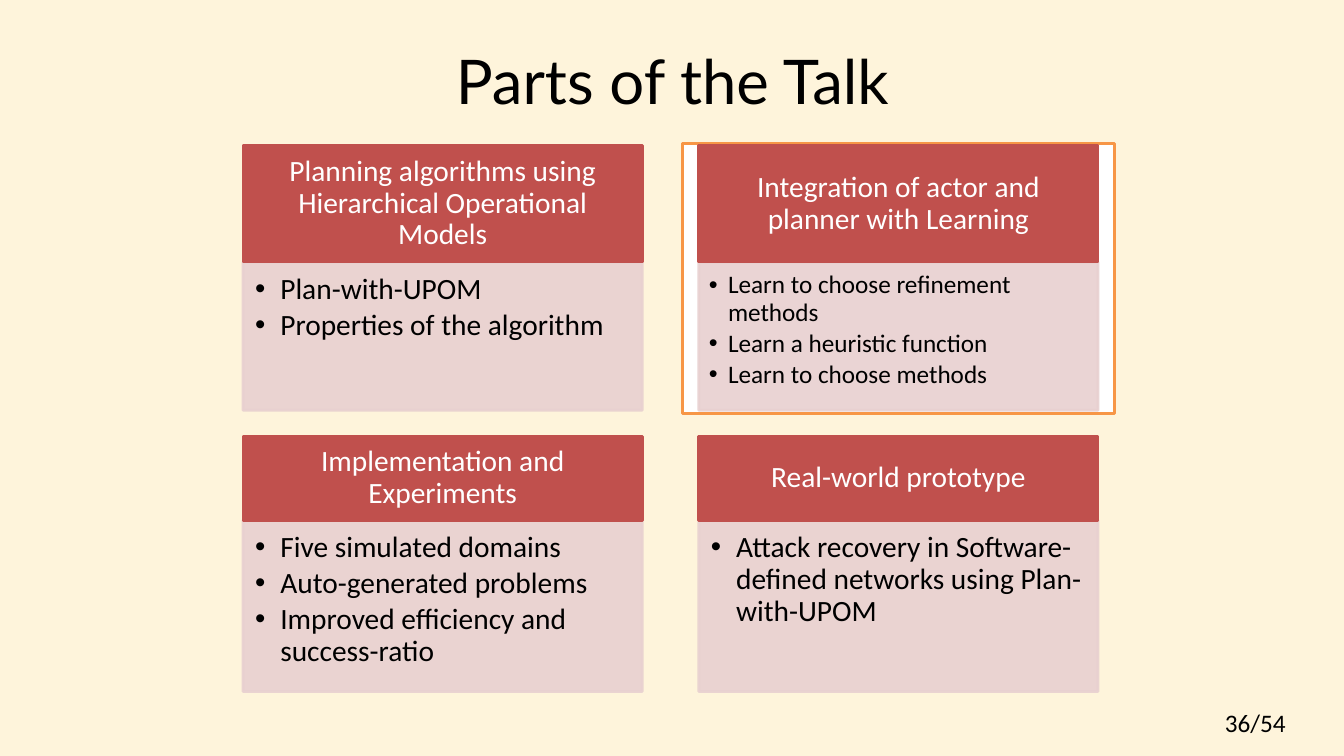
from dataclasses import dataclass

from lxml.etree import SubElement
from pptx import Presentation
from pptx.dml.color import RGBColor
from pptx.enum.shapes import MSO_SHAPE as Shape
from pptx.enum.text import MSO_ANCHOR as Anchor, MSO_AUTO_SIZE as AutoSize, PP_ALIGN as Align
from pptx.oxml.ns import qn
from pptx.util import Inches, Pt


@dataclass(frozen=True)
class Theme:
    background: str = "FEF4DB"
    ink: str = "000000"
    paper: str = "FFFFFF"
    accent: str = "C0504D"
    tint: str = "E8D0D0"
    highlight: str = "F79646"
    tint_opacity: int = 90
    title_font: str = "Lato"
    body_font: str = "Calibri"
    title_size: int = 44
    body_size: int = 21
    small_size: int = 18


class TalkSlide:
    """Places elements on a slide by percentages of its width and height."""

    def __init__(self, deck, theme):
        self.deck, self.theme = deck, theme
        layout = deck.slide_layouts.get_by_name("Comparison")
        self.page = deck.slides.add_slide(layout)
        fill = self.page.background.fill
        fill.solid()
        fill.fore_color.rgb = RGBColor.from_string(theme.background)

    def area(self, left, top, width, height):
        across, down = self.deck.slide_width / 100, self.deck.slide_height / 100
        return [round(share * unit) for share, unit in
                zip((left, top, width, height), (across, down, across, down))]

    def place(self, box, area):
        box.left, box.top, box.width, box.height = self.area(*area)

    def paint(self, box, fill, line, opacity=100):
        box.fill.solid()
        box.fill.fore_color.rgb = RGBColor.from_string(fill)
        box.line.color.rgb = RGBColor.from_string(line)
        box.line.width = Pt(2)
        if opacity < 100:
            for color in box._element.spPr.iter(qn("a:srgbClr")):
                SubElement(color, qn("a:alpha"), val=str(opacity * 1000))

    def frame(self, box, anchor, insets):
        frame = box.text_frame
        frame.word_wrap = True
        frame.auto_size = AutoSize.NONE
        frame.vertical_anchor = anchor
        (frame.margin_left, frame.margin_top,
         frame.margin_right, frame.margin_bottom) = map(Inches, insets)
        return frame

    def style(self, para, size, color, font=None, align=Align.LEFT):
        para.alignment = align
        para.font.name = font or self.theme.body_font
        para.font.size = Pt(size)
        para.font.bold = False
        para.font.color.rgb = RGBColor.from_string(color)

    def title(self, text, area):
        box = self.page.shapes.title
        self.place(box, area)
        frame = self.frame(box, Anchor.MIDDLE, (0.1, 0.05, 0.1, 0.05))
        frame.text = text
        self.style(frame.paragraphs[0], self.theme.title_size, self.theme.ink,
                   self.theme.title_font, Align.CENTER)

    def rectangle(self, area, fill, line):
        box = self.page.shapes.add_shape(Shape.RECTANGLE, *self.area(*area))
        box.shadow.inherit = False
        self.paint(box, fill, line)
        return box

    def highlight(self, area):
        """Adds a frame behind everything else on the slide."""
        box = self.rectangle(area, self.theme.paper, self.theme.highlight)
        self.page.shapes._spTree.insert(2, box._element)

    def heading(self, text, area):
        box = self.rectangle(area, self.theme.accent, self.theme.accent)
        frame = self.frame(box, Anchor.MIDDLE, (0.16, 0.09, 0.16, 0.09))
        frame.text = text
        para = frame.paragraphs[0]
        para.line_spacing = 0.9
        self.style(para, self.theme.body_size, self.theme.paper, align=Align.CENTER)

    def bullets(self, slot, items, area, size):
        box = self.page.placeholders[slot]
        self.place(box, area)
        self.paint(box, self.theme.tint, self.theme.tint, self.theme.tint_opacity)
        small = size == self.theme.small_size
        insets = (0.1, 0.1, 0.14, 0.16) if small else (0.12, 0.12, 0.16, 0.18)
        frame = self.frame(box, Anchor.TOP, insets)
        frame.text = "\n".join(items)
        indent = Inches(0.19 if small else 0.25)
        for para in frame.paragraphs:
            properties = para._p.get_or_add_pPr()
            properties.set("marL", str(indent))
            properties.set("indent", str(-indent))
            SubElement(properties, qn("a:buFont"), typeface="Arial")
            SubElement(properties, qn("a:buChar"), char="•")
            para.line_spacing = 0.9
            para.space_before = Pt(0)
            para.space_after = Pt(round(0.15 * size, 1))
            self.style(para, size, self.theme.ink)

    def page_number(self, text, area):
        box = self.page.shapes.add_textbox(*self.area(*area))
        frame = self.frame(box, Anchor.TOP, (0.1, 0.05, 0.1, 0.05))
        frame.text = text
        self.style(frame.paragraphs[0], self.theme.small_size, self.theme.ink)


THEME = Theme()
LEFT, CARD_WIDTH, COLUMN_STEP = 18.08, 29.71, 33.91
ROWS = [  # top, heading height, list height
    (19.2, 15.47, 19.6),
    (57.73, 11.07, 22.67),
]
PARTS = [
    ("Planning algorithms using Hierarchical Operational Models", THEME.body_size,
     ["Plan-with-UPOM", "Properties of the algorithm"]),
    ("Integration of actor and planner with Learning", THEME.small_size,
     ["Learn to choose refinement methods", "Learn a heuristic function",
      "Learn to choose methods"]),
    ("Implementation and Experiments", THEME.body_size,
     ["Five simulated domains", "Auto-generated problems",
      "Improved efficiency and success-ratio"]),
    ("Real-world prototype", THEME.body_size,
     ["Attack recovery in Software-defined networks using Plan-with-UPOM"]),
]


def main():
    deck = Presentation()
    deck.slide_width, deck.slide_height = Inches(13.33), Inches(7.5)
    slide = TalkSlide(deck, THEME)
    slide.title("Parts of the Talk", (16.28, 2.27, 67.52, 16.67))
    slide.highlight((50.79, 18.93, 32.11, 35.73))
    for index, (heading, size, items) in enumerate(PARTS):
        row, column = divmod(index, 2)
        top, heading_height, list_height = ROWS[row]
        left = LEFT + column * COLUMN_STEP
        slide.heading(heading, (left, top, CARD_WIDTH, heading_height))
        slide.bullets(index + 1, items,
                      (left, top + heading_height, CARD_WIDTH, list_height), size)
    slide.page_number("36/54", (90.4, 92.93, 9.23, 5.33))
    deck.save("out.pptx")


if __name__ == "__main__":
    main()
